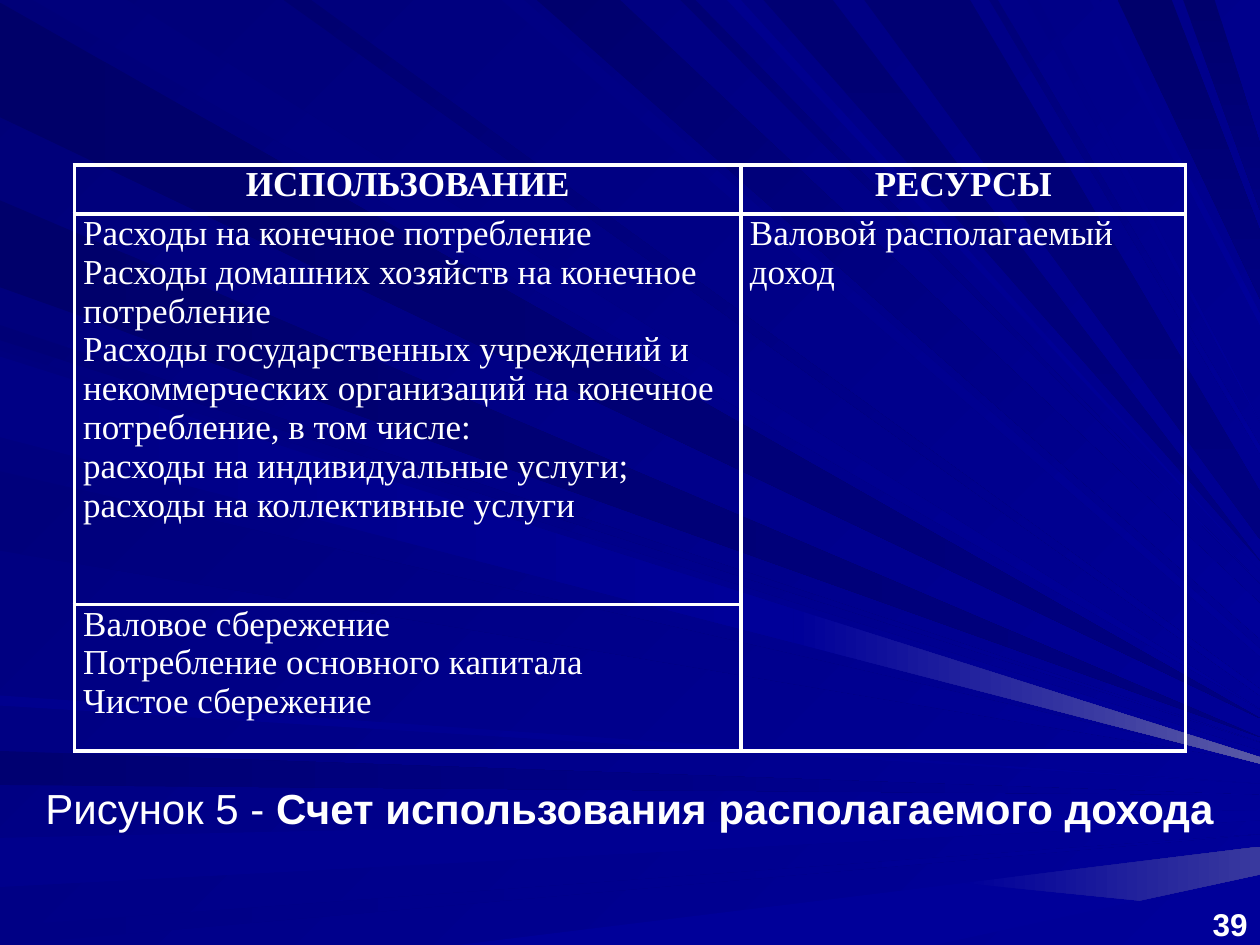
"""Build the slide with the disposable income use account on a blue ray background."""
from dataclasses import dataclass

from lxml.etree import SubElement
from pptx import Presentation
from pptx.dml.color import RGBColor as RGB
from pptx.enum.text import MSO_ANCHOR as ANCHOR, MSO_AUTO_SIZE as AUTO, PP_ALIGN as ALIGN
from pptx.oxml.ns import qn
from pptx.util import Inches, Pt


@dataclass(frozen=True)
class Theme:
    text: str = "FFFFFF"
    back: tuple = ("000078", "000099")
    dark: str = "000080"
    light: str = "000099"
    glow: str = "5A5AA6"
    dim_glow: str = "39399E"
    sans: str = "Arial"
    serif: str = "Times New Roman"
    caption: int = 24
    cell: int = 20
    number: int = 18
    border: float = 2.25


T = Theme()
W, H = 10, 7.5
GLOW_START = 0.63

CAPTION = ("Рисунок 5 ‑ ", "Счет использования располагаемого дохода")
NUMBER = "39"
HEADERS = ("ИСПОЛЬЗОВАНИЕ", "РЕСУРСЫ")
SPENDING = (
    "Расходы на конечное потребление",
    "Расходы домашних хозяйств на конечное потребление",
    "Расходы государственных учреждений и некоммерческих организаций на конечное потребление, в том числе:",
    "расходы на индивидуальные услуги;",
    "расходы на коллективные услуги",
)
SAVING = ("Валовое сбережение", "Потребление основного капитала", "Чистое сбережение")
INCOME = ("Валовой располагаемый доход",)
COL_SHARES = (0.6, 0.4)
ROW_HEIGHTS = (0.39, 3.1, 1.16)
TABLE_BOX = (0.59, 1.31, 8.82, sum(ROW_HEIGHTS))
CAPTION_BOX = (0.26, 6.16, 9.53, 0.5)
NUMBER_BOX = (9.49, 7.14, 0.51, 0.39)

EDGES = {
    "left": lambda y: (0, y),
    "top": lambda x: (x, 0),
    "bottom": lambda x: (x, H),
}
RAY_GROUPS = (
    ("left", 0, T.dark, None, (("000069", 0.02, 0.93, 5.7),)),
    ("top", 45, T.light, None, (("00007B", 1.01, 0.26, 5.63),)),
    ("left", 0, T.light, None, (
        ("000071", 5.96, 6.23, 6.31),
        ("00008C", 6.65, 7.04, 6.43, 6.51),
        ("000085", 7.35, 7.5, 6.62),
    )),
    ("bottom", 0, T.light, T.dim_glow, ((T.light, 3.64, 7.42, 6.72, 6.94),)),
    ("left", 45, T.light, None, (("000076", 2.58, 2.7, 5.89),)),
    ("left", 0, T.dark, None, (("00006B", 1.59, 2.28, 5.85),)),
    ("top", 45, T.light, None, (
        ("000083", 4.16, 3.98, 5.15, 5.21),
        ("00006D", 4.92, 4.26, 4.79, 5.07),
        ("000073", 5.52, 5.4, 4.63),
    )),
    ("top", 90, T.dark, None, (
        ("000073", 6.61, 6.06, 4.45),
        ("00006B", 9.3, 8.87, 1.83, 2.37),
        ("00006D", 9.64, 9.39, 1.14, 1.67),
    )),
    ("left", 45, T.light, None, (
        ("00007E", 2.78, 3.42, 5.96, 6.02),
        ("00007B", 3.74, 4.37, 6.05),
        ("00008E", 5.52, 5.6, 6.22),
    )),
    ("top", 45, T.light, None, (
        ("000070", 2.47, 2.25, 5.47, 5.52),
        ("00008E", 5.88, 5.77, 4.53),
    )),
    ("top", 90, T.dark, None, (("000073", 7.7, 6.86, 3.9, 4.28),)),
    ("top", 45, T.light, None, (
        ("000078", 7.92, 7.85, 3.54, 3.6),
        ("000085", 8.24, 8.15, 3.35),
        ("00008A", 8.72, 8.65, 2.49, 2.58),
    )),
    ("left", 0, T.light, T.glow, (("000085", 2.83, 3.47, 6.01, 6.06),)),
)


def inches(box):
    return [Inches(v) for v in box]


def paint(fill, colors, angle):
    fill.gradient()
    fill.gradient_angle = (360 - angle) % 360
    for stop, color in zip(fill.gradient_stops, colors):
        stop.color.rgb = RGB.from_string(color)


def between(a, b, share):
    return tuple(u + (v - u) * share for u, v in zip(a, b))


def add_band(group, corners, colors, angle):
    start, *rest = [inches(point) for point in corners]
    builder = group.shapes.build_freeform(*start)
    builder.add_line_segments(rest, close=True)
    sp = builder.convert_to_shape()
    sp.shadow.inherit = False
    sp.line.fill.background()
    paint(sp.fill, colors, angle)


def add_rays(s):
    group = s.shapes.add_group_shape()
    for edge, angle, end, glow, rays in RAY_GROUPS:
        for shade, near, far, *tips in rays:
            a, b = EDGES[edge](near), EDGES[edge](far)
            c, d = (W, tips[0]), (W, tips[-1])
            middle = GLOW_START if glow else 1
            e, f = between(a, c, middle), between(b, d, middle)
            add_band(group, (a, b, f, e), (shade, end), angle)
            if glow:
                add_band(group, (e, f, d, c), (end, glow), angle)


def add_caption(s):
    sp = s.shapes.title
    sp.left, sp.top, sp.width, sp.height = inches(CAPTION_BOX)
    s.shapes.element.append(sp.element)
    tf = sp.text_frame
    tf.auto_size, tf.vertical_anchor = AUTO.NONE, ANCHOR.TOP
    p = tf.paragraphs[0]
    for text, bold in zip(CAPTION, (False, True)):
        r = p.add_run()
        r.text, r.font.bold = text, bold
    style(p, T.sans, T.caption)


def style(p, face, size, bold=None, align=ALIGN.LEFT):
    p.alignment = align
    p.font.name, p.font.size, p.font.bold = face, Pt(size), bold
    p.font.color.rgb = RGB.from_string(T.text)


def add_number(s):
    tf = s.shapes.add_textbox(*inches(NUMBER_BOX)).text_frame
    tf.word_wrap, tf.vertical_anchor = True, ANCHOR.BOTTOM
    tf.text = NUMBER
    style(tf.paragraphs[0], T.sans, T.number, True, ALIGN.RIGHT)


def add_borders(cell):
    props = cell._tc.get_or_add_tcPr()
    for i, side in enumerate(("lnL", "lnR", "lnT", "lnB")):
        ln = SubElement(props, qn(f"a:{side}"), w=str(Pt(T.border)))
        SubElement(SubElement(ln, qn("a:solidFill")), qn("a:srgbClr"), val=T.text)
        props.insert(i, ln)


def add_account(s):
    table = s.shapes.add_table(len(ROW_HEIGHTS), len(COL_SHARES), *inches(TABLE_BOX)).table
    table.first_row = table.horz_banding = False
    for col, share in zip(table.columns, COL_SHARES):
        col.width = Inches(TABLE_BOX[2] * share)
    for row, height in zip(table.rows, ROW_HEIGHTS):
        row.height = Inches(height)
    for cell in table.iter_cells():
        cell.fill.background()
        cell.margin_left = cell.margin_right = Inches(0.07)
        cell.margin_top = cell.margin_bottom = 0
        add_borders(cell)
    table.cell(1, 1).merge(table.cell(2, 1))
    body = {(1, 0): SPENDING, (1, 1): INCOME, (2, 0): SAVING}
    heads = {(0, c): (text,) for c, text in enumerate(HEADERS)}
    for (r, c), lines in {**heads, **body}.items():
        p = table.cell(r, c).text_frame.paragraphs[0]
        p.text = "\v".join(lines)
        style(p, T.serif, T.cell, r == 0, ALIGN.LEFT if r else ALIGN.CENTER)


def main():
    prs = Presentation()
    prs.slide_width, prs.slide_height = Inches(W), Inches(H)
    s = prs.slides.add_slide(prs.slide_layouts[5])
    paint(s.background.fill, T.back, 45)
    add_rays(s)
    add_caption(s)
    add_number(s)
    add_account(s)
    prs.save("out.pptx")


if __name__ == "__main__":
    main()
